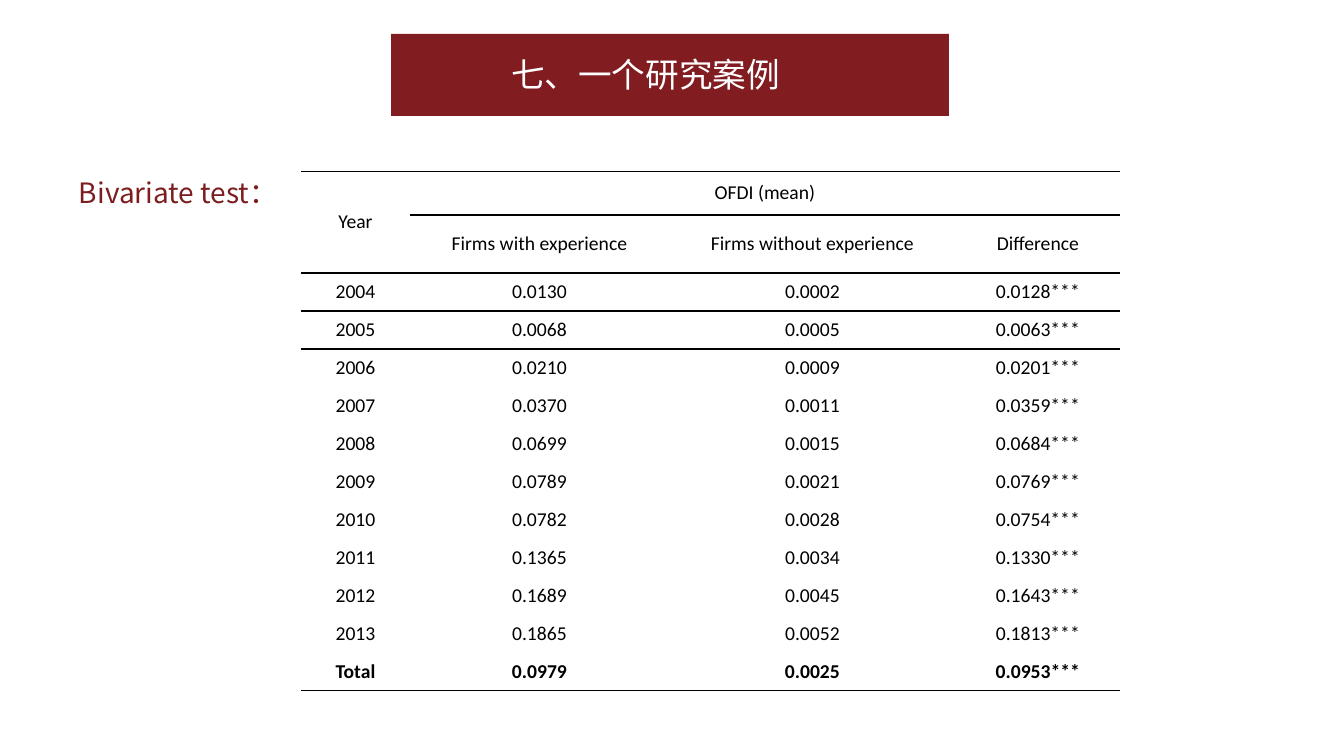
from lxml.etree import SubElement
from pptx import Presentation
from pptx.dml.color import RGBColor
from pptx.enum.shapes import MSO_SHAPE as Shape
from pptx.enum.text import MSO_ANCHOR as Anchor, PP_ALIGN as Align
from pptx.oxml import parse_xml
from pptx.oxml.ns import nsdecls, qn
from pptx.util import Emu, Pt

EMU_PER_PX = 914400 / 100.8
MAROON = "811C20"
CJK_FONT = "Noto Sans CJK SC"
PLAIN_TABLE_STYLE = "{2D5ABB26-0587-4C30-8999-92F81FD0307C}"
COLUMN_WIDTHS = (109, 259, 287, 164)
ROW_HEIGHTS = (44, 58) + (38,) * 11
ROWS = (
    ("Year", "OFDI (mean)", "", ""),
    ("", "Firms with experience", "Firms without experience", "Difference"),
    ("2004", "0.0130", "0.0002", "0.0128***"),
    ("2005", "0.0068", "0.0005", "0.0063***"),
    ("2006", "0.0210", "0.0009", "0.0201***"),
    ("2007", "0.0370", "0.0011", "0.0359***"),
    ("2008", "0.0699", "0.0015", "0.0684***"),
    ("2009", "0.0789", "0.0021", "0.0769***"),
    ("2010", "0.0782", "0.0028", "0.0754***"),
    ("2011", "0.1365", "0.0034", "0.1330***"),
    ("2012", "0.1689", "0.0045", "0.1643***"),
    ("2013", "0.1865", "0.0052", "0.1813***"),
    ("Total", "0.0979", "0.0025", "0.0953***"),
)
RULE_WIDTHS = {0: 0.75, 1: 1, 2: 1, 3: 1, len(ROWS): 1}


def px(length):
    """Turn pixels into EMU."""
    return Emu(round(length * EMU_PER_PX))


def color(hex_code):
    """Turn a hex string into a colour."""
    return RGBColor.from_string(hex_code)


def write(frame, text, font, size, hex_code, align, bold=False):
    """Put one formatted paragraph into a text frame."""
    para = frame.paragraphs[0]
    para.text = text
    para.alignment = align
    para.font.name = font
    para.font.size = Pt(size)
    para.font.bold = bold
    para.font.color.rgb = color(hex_code)
    SubElement(para._p.pPr.find(qn("a:defRPr")), qn("a:ea"), typeface=font)


def add_title(page, text):
    """Place the title on a maroon banner."""
    banner = page.shapes.add_shape(Shape.RECTANGLE, px(391), px(34), px(558), px(82))
    banner.shadow.inherit = False
    banner.line.fill.background()
    title = page.shapes.title
    title.left, title.top, title.width, title.height = px(501), px(49), px(339), px(50)
    for shape in (banner, title):
        shape.fill.solid()
        shape.fill.fore_color.rgb = color(MAROON)
    title._element.addprevious(banner._element)
    title.text_frame.vertical_anchor = Anchor.MIDDLE
    write(title.text_frame, text, CJK_FONT, 24, "FFFFFF", Align.LEFT)


def add_label(page, text):
    """Add the label beside the table."""
    box = page.shapes.add_textbox(px(69), px(171), px(1143), px(112))
    box.text_frame.word_wrap = True
    write(box.text_frame, text, CJK_FONT, 20, "7C1E1F", Align.JUSTIFY)


def rule_cell(cell, top, bottom):
    """Draw the black rules above and below a cell."""
    for tag, width in (("lnB", bottom), ("lnT", top)):
        if width:
            line = parse_xml(
                f'<a:{tag} {nsdecls("a")} w="{Pt(width)}"><a:solidFill>'
                f'<a:srgbClr val="000000"/></a:solidFill></a:{tag}>'
            )
            cell._tc.get_or_add_tcPr().insert(0, line)


def add_results_table(page):
    """Add the table of OFDI means by year."""
    frame = page.shapes.add_table(
        len(ROWS), len(COLUMN_WIDTHS), px(301), px(171),
        px(sum(COLUMN_WIDTHS)), px(sum(ROW_HEIGHTS)),
    )
    table = frame.table
    table.first_row = table.horz_banding = False
    table._tbl.tblPr.find(qn("a:tableStyleId")).text = PLAIN_TABLE_STYLE
    for column, width in zip(table.columns, COLUMN_WIDTHS):
        column.width = px(width)
    for row, height in zip(table.rows, ROW_HEIGHTS):
        row.height = px(height)
    for r, texts in enumerate(ROWS):
        for c, text in enumerate(texts):
            cell = table.cell(r, c)
            cell.fill.background()
            cell.vertical_anchor = Anchor.MIDDLE
            cell.margin_top = cell.margin_bottom = px(5 if r == 0 else 0)
            in_year_head = c == 0 and r < 2
            top = None if in_year_head and r == 1 else RULE_WIDTHS.get(r)
            bottom = None if in_year_head and r == 0 else RULE_WIDTHS.get(r + 1)
            rule_cell(cell, top, bottom)
            if text:
                write(cell.text_frame, text, "Calibri", 14, "000000",
                      Align.CENTER, bold=text == "Total" or r == len(ROWS) - 1)
    table.cell(0, 0).merge(table.cell(1, 0))
    table.cell(0, 1).merge(table.cell(0, 3))


def main():
    """Build and save the slide."""
    deck = Presentation()
    deck.slide_width, deck.slide_height = px(1344), px(756)
    page = deck.slides.add_slide(deck.slide_layouts[5])
    add_title(page, "七、一个研究案例")
    add_label(page, "Bivariate test：")
    add_results_table(page)
    deck.save("out.pptx")


if __name__ == "__main__":
    main()
